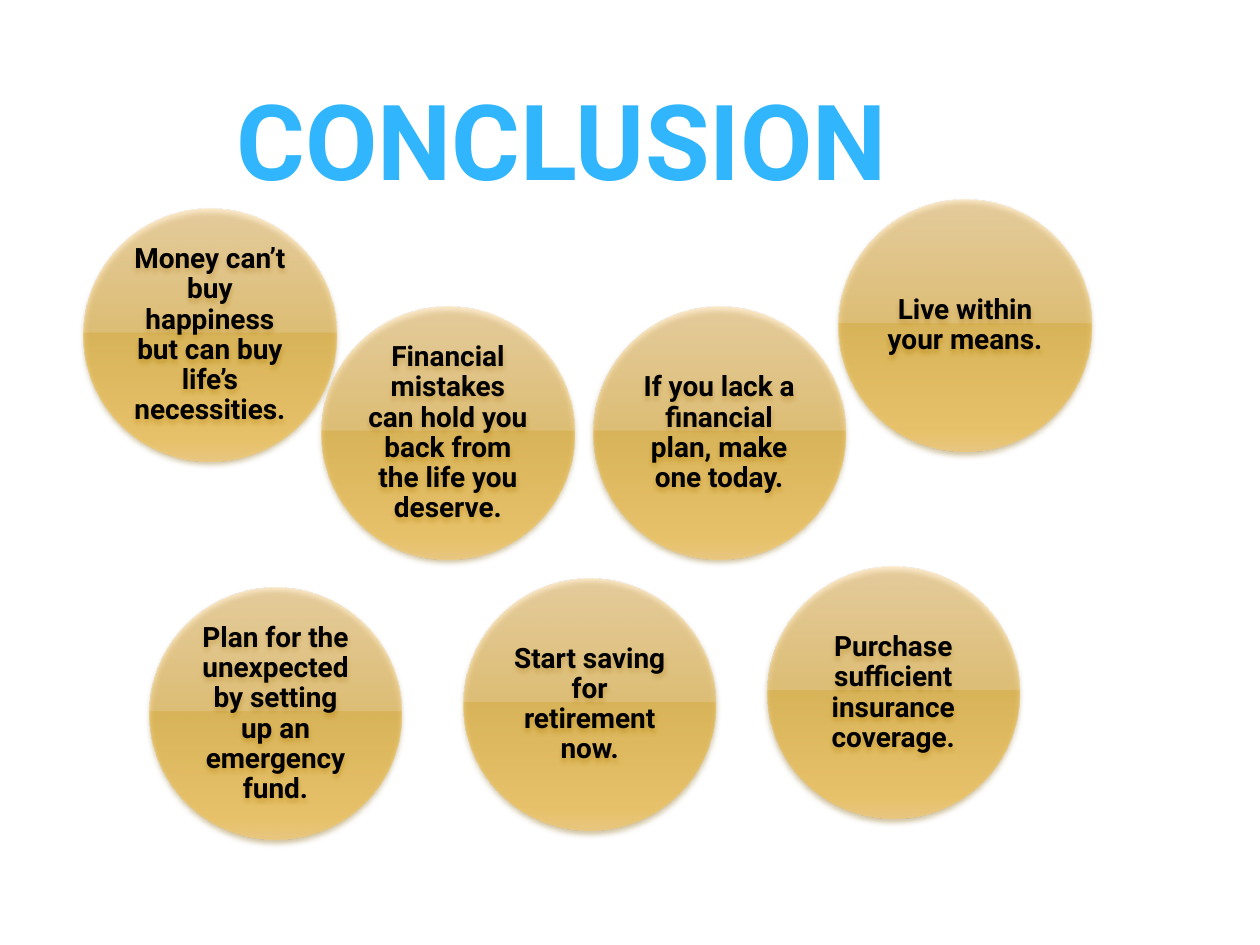
from lxml.etree import SubElement
from pptx import Presentation
from pptx.dml.color import RGBColor
from pptx.enum.shapes import MSO_SHAPE
from pptx.enum.text import MSO_ANCHOR, MSO_AUTO_SIZE, PP_ALIGN
from pptx.oxml.ns import qn
from pptx.util import Pt

COLORS = {
    "title": "31B6FD",
    "text": "000000",
    "shadow": "977728",
    "pale": "F8D395",
    "upper": "EBB847",
    "lower": "E0A30E",
    "glow": "FFC133",
    "rim": "FFC95E",
}
GLOSS = [(0, "pale"), (49, "upper"), (49, "lower"), (92, "glow"), (100, "rim")]
FONT = "Roboto"
DIAMETER = 144

# Left, top and wording of each piece of advice
ADVICE = [
    (48, 119.5, "Money can’t buy happiness but can buy life’s necessities."),
    (85.5, 336, "Plan for the unexpected by setting up an emergency fund."),
    (184, 175.5, "Financial mistakes can hold you back from the life you deserve."),
    (265, 330.5, "Start saving for retirement now."),
    (339, 175.5, "If you lack a financial plan, make one today."),
    (438.5, 324, "Purchase sufficient insurance coverage."),
    (479.5, 114, "Live within your means."),
]


def write(shape, text, size, color, anchor, insets):
    """Set centred bold text; insets are horizontal and vertical."""
    frame = shape.text_frame
    frame.word_wrap = True
    frame.auto_size = MSO_AUTO_SIZE.NONE
    frame.vertical_anchor = anchor
    frame.margin_left = frame.margin_right = Pt(insets[0])
    frame.margin_top = frame.margin_bottom = Pt(insets[1])
    frame.text = text
    paragraph = frame.paragraphs[0]
    paragraph.alignment = PP_ALIGN.CENTER
    paragraph.line_spacing = 0.9 if anchor == MSO_ANCHOR.MIDDLE else 1.0
    font = paragraph.runs[0].font
    font.name, font.size, font.bold = FONT, Pt(size), True
    font.color.rgb = RGBColor.from_string(COLORS[color])


def add_color(parent, color, opacity):
    node = SubElement(parent, qn("a:srgbClr"), val=COLORS[color])
    SubElement(node, qn("a:alpha"), val=str(opacity * 1000))


def add_gloss(shape):
    """Half-transparent glossy gradient with a soft shadow below."""
    shape.line.fill.background()
    properties = shape.fill._xPr
    gradient = SubElement(properties, qn("a:gradFill"), rotWithShape="1")
    stops = SubElement(gradient, qn("a:gsLst"))
    for position, color in GLOSS:
        add_color(SubElement(stops, qn("a:gs"), pos=str(position * 1000)), color, 50)
    SubElement(gradient, qn("a:lin"), ang="5400000", scaled="0")
    properties.find(qn("a:ln")).addprevious(gradient)

    effects = SubElement(properties, qn("a:effectLst"))
    shadow = SubElement(effects, qn("a:outerShdw"), blurRad=str(Pt(3.1)),
                        dist=str(Pt(2)), dir="5400000", rotWithShape="0")
    add_color(shadow, "shadow", 83)


def place_title(slide, left, top, width, height):
    title = slide.shapes.title
    title.left, title.top = Pt(left), Pt(top)
    title.width, title.height = Pt(width), Pt(height)
    write(title, "CONCLUSION", 60, "title", MSO_ANCHOR.BOTTOM, (3.6, 0))


def add_advice(slide, left, top, diameter, text):
    circle = slide.shapes.add_shape(
        MSO_SHAPE.OVAL, Pt(left), Pt(top), Pt(diameter), Pt(diameter))
    add_gloss(circle)
    write(circle, text, 16, "text", MSO_ANCHOR.MIDDLE, (5, 5))


def main():
    deck = Presentation()
    deck.slide_width, deck.slide_height = Pt(720), Pt(540)
    slide = deck.slides.add_slide(deck.slide_layouts[5])

    # Heading
    place_title(slide, 36, 25, 570, 90)

    # Circles of advice
    for left, top, text in ADVICE:
        add_advice(slide, left, top, DIAMETER, text)

    deck.save("out.pptx")


if __name__ == "__main__":
    main()
